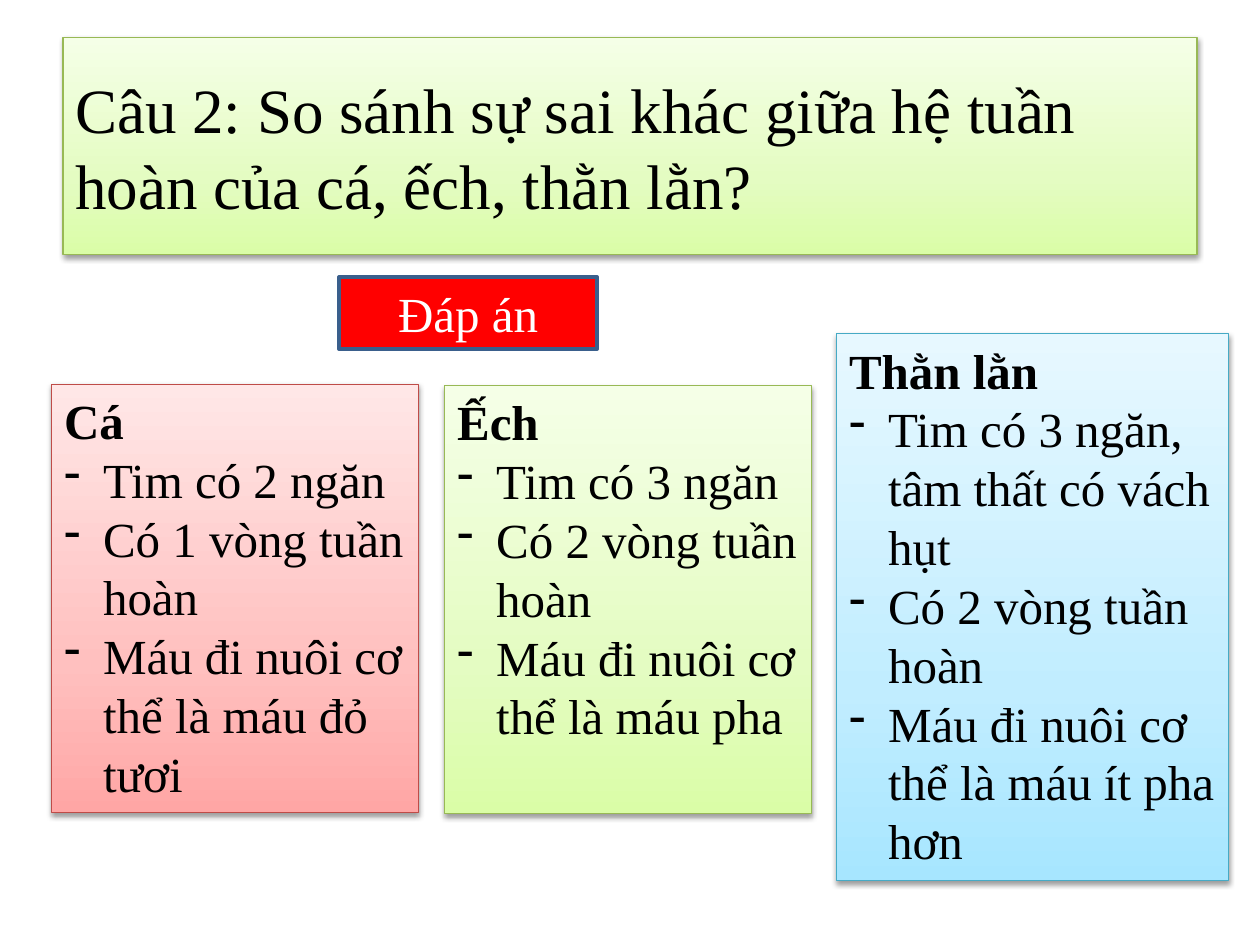
"""Build the quiz slide comparing the circulatory systems of fish, frog and lizard."""
from copy import deepcopy

from lxml import etree
from pptx import Presentation
from pptx.dml.color import RGBColor
from pptx.enum.shapes import MSO_SHAPE
from pptx.enum.text import MSO_ANCHOR, PP_ALIGN
from pptx.oxml.ns import qn
from pptx.util import Inches, Pt

RECTANGLE = MSO_SHAPE.RECTANGLE
TOP, MIDDLE = MSO_ANCHOR.TOP, MSO_ANCHOR.MIDDLE
LEFT, CENTER = PP_ALIGN.LEFT, PP_ALIGN.CENTER
FONT = "Times New Roman"
RED = (["FFA6A5", "FFC0BF", "FFE7E7"], "BF4C48")
GREEN = (["DAFDA7", "E4FCC2", "F5FFE7"], "98B955")
BLUE = (["A7E6FF", "C1EDFF", "E7F8FF"], "46AAC5")
STOPS = (0, 0.35, 1)


def add_box(place, lines, size, color, outline, weight, anchor, align):
    box = slide.shapes.add_shape(RECTANGLE, *(Inches(value) for value in place))
    box.shadow.inherit = False
    box.line.color.rgb = RGBColor.from_string(outline)
    box.line.width = Pt(weight)
    frame = box.text_frame
    frame.word_wrap = True
    frame.vertical_anchor = anchor
    frame.text = "\n".join(lines)
    for paragraph in frame.paragraphs:
        paragraph.alignment = align
        font = paragraph.runs[0].font
        font.name, font.size = FONT, Pt(size)
        font.color.rgb = RGBColor.from_string(color)
    return box


def add_glow(box, tints):
    box.fill.gradient()
    box.fill.gradient_angle = 90
    first = box.fill._fill._gradFill.find(qn("a:gsLst"))[0]
    first.addnext(deepcopy(first))
    for stop, position, tint in zip(box.fill.gradient_stops, STOPS, tints):
        stop.position = position
        stop.color.rgb = RGBColor.from_string(tint)
    effects = box._element.spPr.find(qn("a:effectLst"))
    shadow = etree.SubElement(effects, qn("a:outerShdw"), blurRad="40000",
                              dist="20000", dir="5400000", rotWithShape="0")
    black = etree.SubElement(shadow, qn("a:srgbClr"), val="000000")
    etree.SubElement(black, qn("a:alpha"), val="38000")


prs = Presentation()
prs.slide_width, prs.slide_height = Inches(10), Inches(7.5)
slide = prs.slides.add_slide(prs.slide_layouts[6])

tints, edge = GREEN
question = add_box(
    (0.5, 0.3, 9, 1.72),
    ["Câu 2: So sánh sự sai khác giữa hệ tuần hoàn của cá, ếch, thằn lằn?"],
    36, "000000", edge, 0.75, MIDDLE, LEFT)
add_glow(question, tints)

animals = [
    ((0.41, 3.05, 2.91, 3.4), RED,
     ["Cá", "Tim có 2 ngăn", "Có 1 vòng tuần hoàn",
      "Máu đi nuôi cơ thể là máu đỏ tươi"]),
    ((3.53, 3.06, 2.91, 3.4), GREEN,
     ["Ếch", "Tim có 3 ngăn", "Có 2 vòng tuần hoàn",
      "Máu đi nuôi cơ thể là máu pha"]),
    ((6.64, 2.65, 3.11, 4.34), BLUE,
     ["Thằn lằn", "Tim có 3 ngăn, tâm thất có vách hụt",
      "Có 2 vòng tuần hoàn", "Máu đi nuôi cơ thể là máu ít pha hơn"]),
]
for place, (tints, edge), lines in animals:
    card = add_box(place, lines, 28, "000000", edge, 0.75, TOP, LEFT)
    add_glow(card, tints)
    heading, *traits = card.text_frame.paragraphs
    heading.runs[0].font.bold = True
    for trait in traits:
        properties = trait._p.get_or_add_pPr()
        properties.set("marL", str(Inches(0.31)))
        properties.set("indent", str(-Inches(0.31)))
        etree.SubElement(properties, qn("a:buFontTx"))
        etree.SubElement(properties, qn("a:buChar"), char="-")

answer = add_box((2.69, 2.2, 2.05, 0.57), ["Đáp án"], 28, "FFFFFF",
                 "3A5F8C", 2, MIDDLE, CENTER)
answer.fill.solid()
answer.fill.fore_color.rgb = RGBColor.from_string("FF0000")

prs.save("out.pptx")
